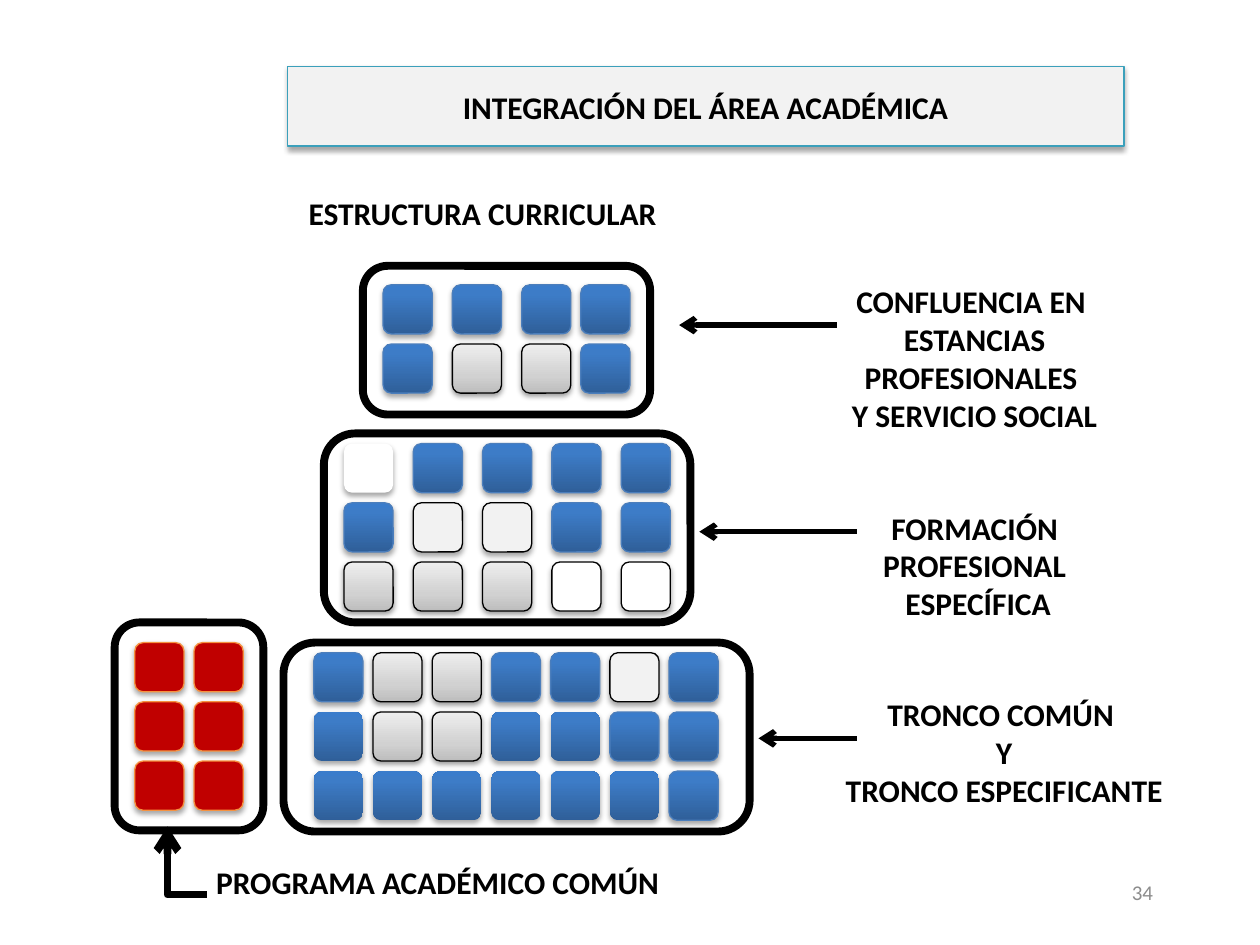
from lxml import etree
from pptx import Presentation
from pptx.dml.color import RGBColor
from pptx.enum import shapes, text
from pptx.oxml import parse_xml
from pptx.oxml.ns import qn
from pptx.util import Inches, Pt

NS = 'xmlns:a="http://schemas.openxmlformats.org/drawingml/2006/main"'
HUES = {
    "black": "000000", "white": "FFFFFF", "pale": "F2F2F2", "red": "C00000",
    "orange": "F69240", "edge": "4B7EBC", "teal": "3BA0BB", "number": "8C8C8C",
}
BLUE = [(0, "2F5F99"), (80, "3D7CC7"), (100, "3A7CCB")]
GREY = [(0, "BDBDBD"), (35, "D1D1D1"), (100, "EEEEEE")]
# Letter in a block's rows -> fill (hue name or gradient stops) and outline
KINDS = {
    "B": (BLUE, "edge"), "b": (BLUE, None), "G": (GREY, "black"),
    "L": ("pale", "black"), "W": ("white", "black"), "w": ("white", None),
    "R": ("red", "orange"),
}
CELL = 0.39
STEP = 0.47
WIDE = 0.55


def hue(name):
    return RGBColor.from_string(HUES[name])


def paint(shape, fill, edge, width=0.75):
    shape.shadow.inherit = False
    if isinstance(fill, str):
        shape.fill.solid()
        shape.fill.fore_color.rgb = hue(fill)
    else:
        stops = "".join(
            f'<a:gs pos="{pos * 1000}"><a:srgbClr val="{tone}"/></a:gs>'
            for pos, tone in fill)
        grad = parse_xml(f'<a:gradFill {NS} rotWithShape="1"><a:gsLst>{stops}'
                         '</a:gsLst><a:lin ang="16200000" scaled="0"/></a:gradFill>')
        shape._element.spPr.find(qn("a:prstGeom")).addnext(grad)
    if edge:
        shape.line.color.rgb = hue(edge)
        shape.line.width = Pt(width)
    else:
        shape.line.fill.background()


def shade(shape, alpha=35, dist=1.8):
    """Give the shape a soft shadow straight below it."""
    glow = shape._element.spPr.find(qn("a:effectLst"))
    glow.append(parse_xml(
        f'<a:outerShdw {NS} blurRad="{Pt(3.1)}" dist="{Pt(dist)}" dir="5400000" '
        f'rotWithShape="0"><a:srgbClr val="{HUES["black"]}">'
        f'<a:alpha val="{alpha * 1000}"/></a:srgbClr></a:outerShdw>'))


def style(frame, align, size=18, tone="black", bold=True):
    for para in frame.paragraphs:
        para.alignment = align
        for run in para.runs:
            font = run.font
            font.name, font.size, font.bold = "Calibri", Pt(size), bold
            font.color.rgb = hue(tone)


def label(slide, box, words, align=text.PP_ALIGN.LEFT, **look):
    frame = slide.shapes.add_textbox(*map(Inches, box)).text_frame
    frame.word_wrap = True
    frame.text = words
    style(frame, align, **look)
    return frame


def heading(slide, box, words):
    title = slide.shapes.title
    title.left, title.top, title.width, title.height = map(Inches, box)
    paint(title, "pale", "teal")
    shade(title)
    title.text_frame.text = words
    title.text_frame.vertical_anchor = text.MSO_ANCHOR.MIDDLE
    style(title.text_frame, text.PP_ALIGN.CENTER)


def block(slide, box, inset, cols, rows):
    """Draw a thick frame and its cells; cols are offsets from the inset."""
    kind = shapes.MSO_SHAPE.ROUNDED_RECTANGLE
    frame = slide.shapes.add_shape(kind, *map(Inches, box))
    paint(frame, "white", "black", 4.5)
    for i, row in enumerate(rows):
        for col, key in zip(cols, row):
            left = box[0] + inset[0] + col
            top = box[1] + inset[1] + i * STEP
            cell = slide.shapes.add_shape(
                kind, Inches(left), Inches(top), Inches(CELL), Inches(CELL))
            fill, edge = KINDS[key]
            paint(cell, fill, edge)
            if fill is GREY:
                shade(cell, 38, 1.6)
            else:
                shade(cell)


def even(count, step):
    return [i * step for i in range(count)]


def arrow(slide, start, end, width=3, bent=False):
    kind = shapes.MSO_CONNECTOR.ELBOW if bent else shapes.MSO_CONNECTOR.STRAIGHT
    link = slide.shapes.add_connector(kind, *map(Inches, start + end))
    link.line.color.rgb = hue("black")
    link.line.width = Pt(width)
    props = link._element.spPr
    if bent:
        props.find(qn("a:prstGeom")).set("prst", "bentConnector2")
    etree.SubElement(props.find(qn("a:ln")), qn("a:tailEnd"), type="arrow")
    etree.SubElement(props, qn("a:effectLst"))


def blocks(slide):
    block(slide, (2.88, 2.11, 2.28, 1.18), (0.16, 0.15),
          (0, WIDE, 2 * WIDE, 1.57), ("BBBB", "BGGB"))
    block(slide, (2.57, 3.44, 2.91, 1.5), (0.16, 0.08),
          even(5, WIDE), ("wBBBB", "BLLBB", "GGGWW"))
    block(slide, (2.25, 5.1, 3.7, 1.5), (0.24, 0.08),
          even(7, STEP), ("BGGBBLB", "bGGbbBB", "bbbbbbB"))
    block(slide, (0.91, 4.94, 1.18, 1.65), (0.16, 0.16),
          even(2, STEP), ("RR",) * 3)


def notes(slide):
    """Name the blocks and point at them."""
    mid = text.PP_ALIGN.CENTER
    label(slide, (2.35, 1.49, 3.68, 0.4), "ESTRUCTURA CURRICULAR")
    upper = label(slide, (6.33, 2.19, 2.81, 2.83),
                  "CONFLUENCIA EN \nESTANCIAS PROFESIONALES \nY SERVICIO SOCIAL\n"
                  "FORMACIÓN PROFESIONAL\n ESPECÍFICA", mid)
    upper.paragraphs[3].space_before = Pt(43)
    label(slide, (5.94, 5.47, 4.06, 1.01),
          "TRONCO COMÚN \nY\nTRONCO ESPECIFICANTE", mid)
    label(slide, (1.56, 6.8, 4.95, 0.44), " PROGRAMA ACADÉMICO COMÚN")
    for start, end, y in ((6.64, 5.39, 2.58), (6.8, 5.55, 4.22), (6.8, 6.02, 5.86)):
        arrow(slide, (start, y), (end, y))
    arrow(slide, (1.64, 7.1), (1.33, 6.56), 4.5, bent=True)


def main():
    deck = Presentation()
    deck.slide_width, deck.slide_height = Inches(10), Inches(7.5)
    slide = deck.slides.add_slide(deck.slide_layouts[5])
    heading(slide, (2.28, 0.53, 6.64, 0.63), "INTEGRACIÓN DEL ÁREA ACADÉMICA")
    blocks(slide)
    notes(slide)
    page = label(slide, (7.17, 6.83, 2.08, 0.5), "34", text.PP_ALIGN.RIGHT,
                 size=12, tone="number", bold=False)
    page.vertical_anchor = text.MSO_ANCHOR.MIDDLE
    deck.save("out.pptx")


if __name__ == "__main__":
    main()
